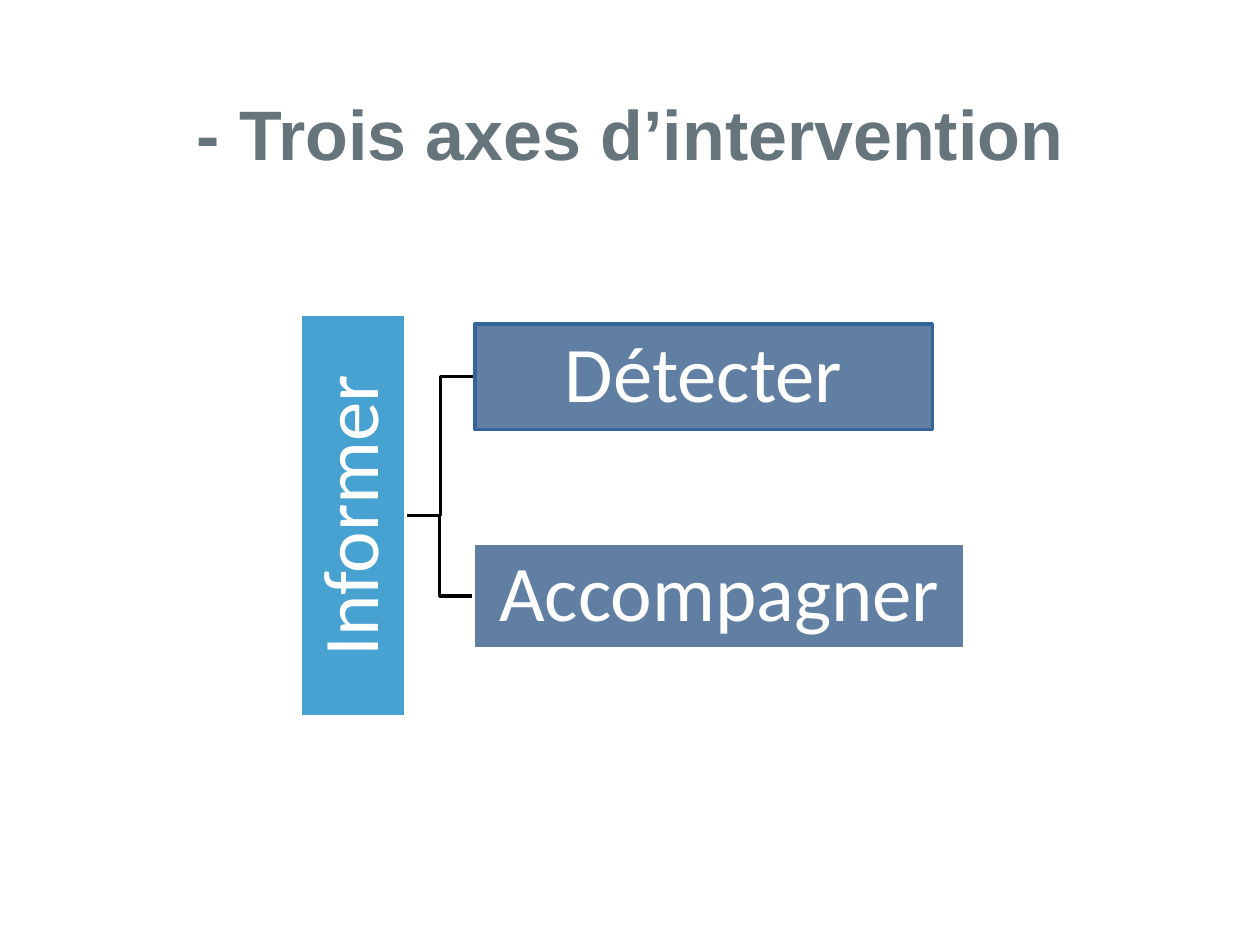
from lxml import etree
from pptx import Presentation
from pptx.dml.color import RGBColor
from pptx.enum.shapes import MSO_SHAPE
from pptx.enum.text import MSO_ANCHOR, PP_ALIGN
from pptx.oxml.ns import qn
from pptx.util import Inches, Pt

RECTANGLE = MSO_SHAPE.RECTANGLE
MIDDLE = MSO_ANCHOR.MIDDLE
CENTER = PP_ALIGN.CENTER

COLORS = {
    "title": "66747B",
    "root": "198AC6",
    "branch": "1F497D",
    "branch_line": "35649A",
    "link": "000000",
    "white": "FFFFFF",
}


def rgb(name):
    return RGBColor.from_string(COLORS[name])


def write(shape, text, font_name, size, color):
    """Put one centred line of text in the shape and return its paragraph."""
    frame = shape.text_frame
    frame.word_wrap = True
    frame.vertical_anchor = MIDDLE
    paragraph = frame.paragraphs[0]
    paragraph.text = text
    paragraph.alignment = CENTER
    paragraph.font.name = font_name
    paragraph.font.size = Pt(size)
    paragraph.font.color.rgb = rgb(color)
    return paragraph


prs = Presentation()
prs.slide_width, prs.slide_height = Inches(10), Inches(7.5)
slide = prs.slides.add_slide(prs.slide_layouts[6])
shapes = slide.shapes

title = shapes.add_textbox(Inches(-0.28), Inches(0.55), Inches(10.56), Inches(1.01))
write(title, "- Trois axes d’intervention", "Arial", 40, "title").font.bold = True

# Elbow links from the root to each branch
root_x, root_y = 3.22, 4.09
for branch_x, branch_y in [(3.76, 4.73), (3.77, 2.99)]:
    bend_x = (root_x + branch_x) / 2
    elbow = [(bend_x, root_y), (bend_x, branch_y), (branch_x, branch_y)]
    builder = shapes.build_freeform(Inches(root_x), Inches(root_y))
    builder.add_line_segments([(Inches(x), Inches(y)) for x, y in elbow], close=False)
    link = builder.convert_to_shape()
    link.shadow.inherit = False
    link.fill.background()
    link.line.color.rgb = rgb("link")
    link.line.width = Pt(2)

# Text, left, top, width, rotation, fill, opacity in %, outline
axes = [
    ("Informer", 1.2, 3.67, 3.2, 270, "root", 80, "white"),
    ("Détecter", 3.77, 2.57, 3.63, 0, "branch", 70, "branch_line"),
    ("Accompagner", 3.76, 4.31, 3.9, 0, "branch", 70, "white"),
]
for text, left, top, width, rotation, fill, opacity, outline in axes:
    axis = shapes.add_shape(RECTANGLE, Inches(left), Inches(top), Inches(width), Inches(0.84))
    axis.rotation = rotation
    axis.shadow.inherit = False
    axis.fill.solid()
    axis.fill.fore_color.rgb = rgb(fill)
    fill_color = axis.fill._xPr.find(qn("a:solidFill"))[0]
    etree.SubElement(fill_color, qn("a:alpha"), val=str(opacity * 1000))
    axis.line.color.rgb = rgb(outline)
    axis.line.width = Pt(2)
    frame = axis.text_frame
    frame.margin_left = frame.margin_right = Inches(0.03)
    frame.margin_top = frame.margin_bottom = Inches(0.03)
    write(axis, text, "Calibri", 45, "white").line_spacing = 0.9

prs.save("out.pptx")
